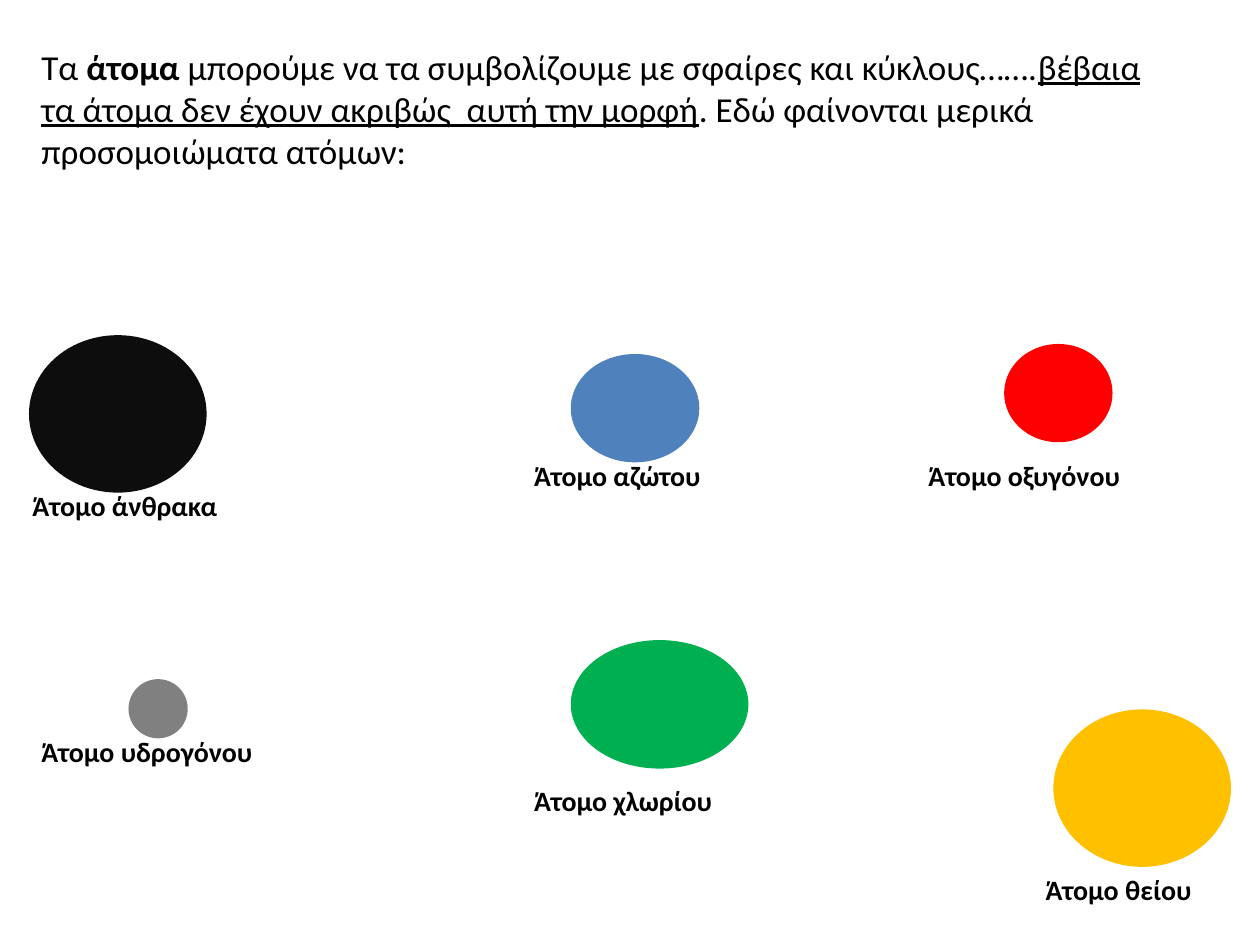
"""Build a slide of model atoms drawn as coloured, labelled circles."""
from pptx import Presentation
from pptx.dml.color import RGBColor
from pptx.enum.shapes import MSO_SHAPE
from pptx.util import Inches, Pt


def color(value):
    return RGBColor.from_string(value)


def add_text(page, spans, left, top, width, height, size):
    box = page.shapes.add_textbox(Inches(left), Inches(top), Inches(width), Inches(height))
    box.text_frame.word_wrap = True
    para = box.text_frame.paragraphs[0]
    for text, style in spans:
        span = para.add_run()
        span.text = text
        span.font.name = "Calibri"
        span.font.size = Pt(size)
        span.font.color.rgb = color("000000")
        span.font.bold = style == "bold"
        span.font.underline = style == "underline"


deck = Presentation()
deck.slide_width = Inches(10)
deck.slide_height = Inches(7.5)
page = deck.slides.add_slide(deck.slide_layouts[6])

intro = [
    ("Τα ", "plain"),
    ("άτομα", "bold"),
    (" μπορούμε να τα συμβολίζουμε με σφαίρες και κύκλους…….", "plain"),
    ("βέβαια τα άτομα δεν έχουν ακριβώς  αυτή την μορφή", "underline"),
    (". Εδώ φαίνονται μερικά προσομοιώματα ατόμων:", "plain"),
]
add_text(page, intro, 0.23, 0.31, 9.22, 1.45, size=20)

atoms = [
    ("άνθρακα", "0D0D0D", (0.23, 2.66, 1.41, 1.25), (0.16, 3.83)),
    ("αζώτου", "4F81BD", (4.53, 2.81, 1.02, 0.86), (4.14, 3.59)),
    ("οξυγόνου", "FF0000", (7.97, 2.73, 0.86, 0.78), (7.27, 3.59)),
    ("υδρογόνου", "808080", (1.02, 5.39, 0.47, 0.47), (0.23, 5.78)),
    ("χλωρίου", "00B050", (4.53, 5.08, 1.41, 1.02), (4.14, 6.17)),
    ("θείου", "FFC000", (8.36, 5.63, 1.41, 1.25), (8.2, 6.88)),
]
for element, fill, bounds, (left, top) in atoms:
    atom = page.shapes.add_shape(MSO_SHAPE.OVAL, *[Inches(length) for length in bounds])
    atom.shadow.inherit = False
    atom.fill.solid()
    atom.fill.fore_color.rgb = color(fill)
    atom.line.fill.background()
    add_text(page, [(f"Άτομο {element}", "bold")], left, top, 2.27, 0.37, size=16)

deck.save("out.pptx")
